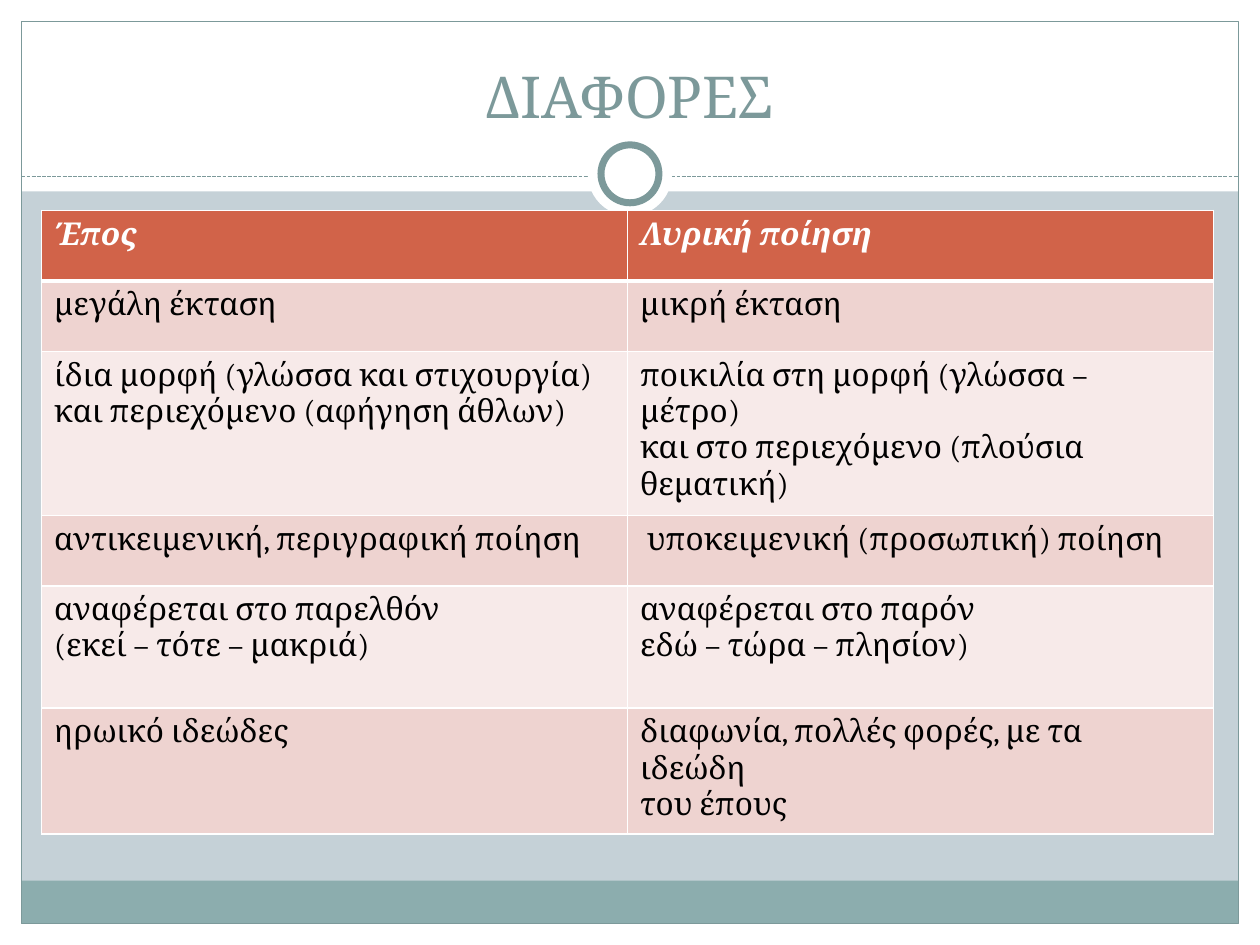
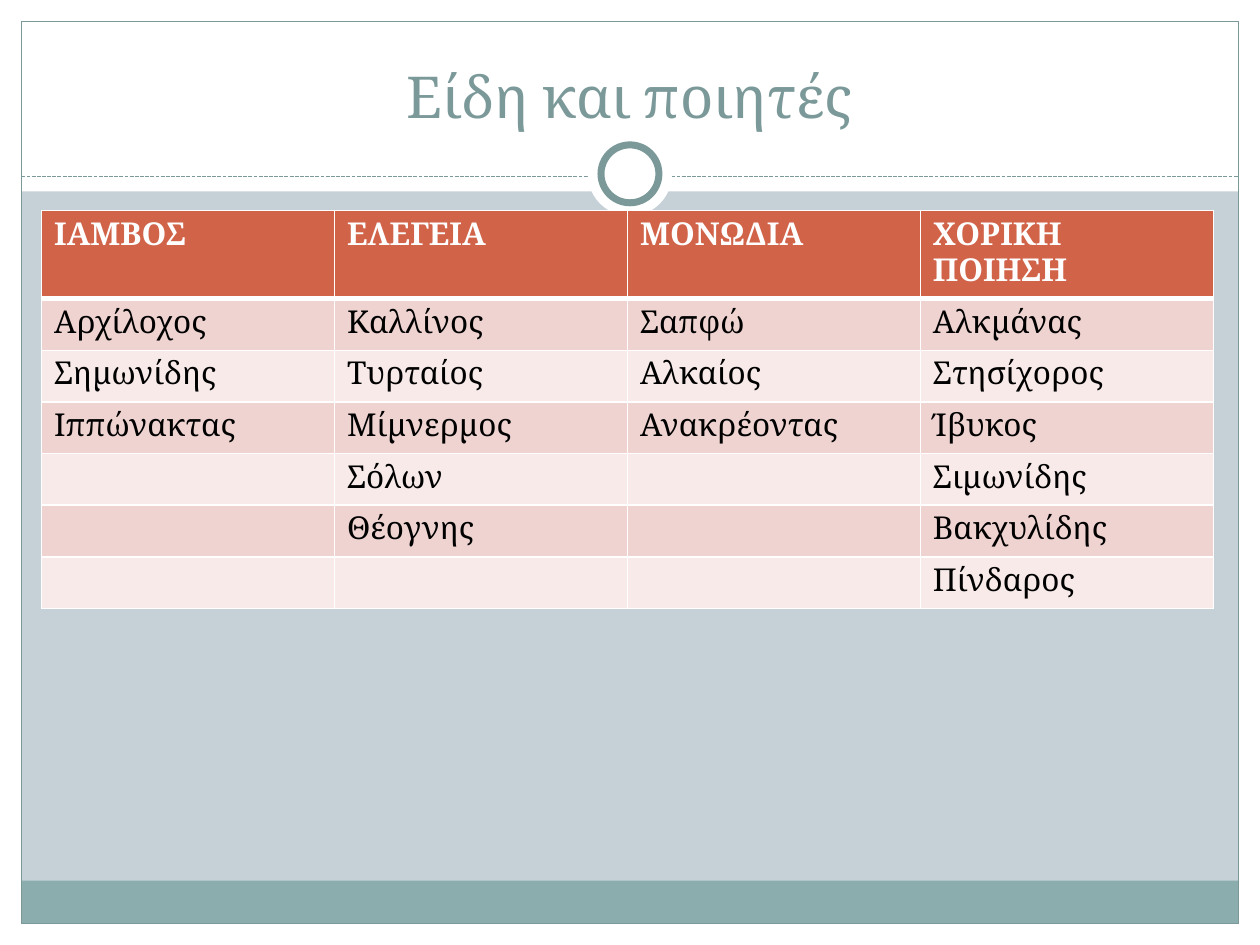
from collections import namedtuple

from lxml.etree import SubElement
from pptx import Presentation
from pptx.dml.color import RGBColor
from pptx.enum.dml import MSO_LINE
from pptx.enum.shapes import MSO_CONNECTOR, MSO_SHAPE
from pptx.enum.text import MSO_ANCHOR, PP_ALIGN
from pptx.oxml.ns import qn
from pptx.util import Inches, Pt

COLORS = {
    "background": "C5D1D7",
    "white": "FFFFFF",
    "black": "000000",
    "accent": "7C999A",
    "footer": "8CADAE",
    "header": "D16349",
    "odd_row": "EED3D0",
    "even_row": "F7EAE9",
}
FONT = "Cambria"
NBSP = chr(160)

Box = namedtuple("Box", "left top width height")
PAGE = Box(0, 0, 10, 7.5)
MARGIN = 0.17
FRAME = Box(MARGIN, MARGIN, PAGE.width - 2 * MARGIN, PAGE.height - 2 * MARGIN)
TITLE = Box(0.33, 0.25, 9.33, 0.83)
TABLE = Box(0.33, 1.67, 9.3, 4.63)

DIFFERENCES = [
    ["Έπος", "Λυρική ποίηση"],
    ["μεγάλη έκταση", "μικρή έκταση"],
    ["ίδια μορφή (γλώσσα και στιχουργία)\nκαι περιεχόμενο (αφήγηση άθλων)",
     "ποικιλία στη μορφή (γλώσσα – μέτρο)\nκαι στο περιεχόμενο (πλούσια θεματική)"],
    ["αντικειμενική, περιγραφική ποίηση", f"{NBSP}υποκειμενική (προσωπική) ποίηση"],
    ["αναφέρεται στο παρελθόν\n(εκεί – τότε – μακριά)",
     "αναφέρεται στο παρόν\nεδώ – τώρα – πλησίον)"],
    ["ηρωικό ιδεώδες", "διαφωνία, πολλές φορές, με τα ιδεώδη\nτου έπους"],
]
POETS = [
    ["ΙΑΜΒΟΣ", "ΕΛΕΓΕΙΑ", "ΜΟΝΩΔΙΑ", "ΧΟΡΙΚΗ ΠΟΙΗΣΗ"],
    ["Αρχίλοχος", "Καλλίνος", "Σαπφώ", "Αλκμάνας"],
    ["Σημωνίδης", "Τυρταίος", "Αλκαίος", "Στησίχορος"],
    ["Ιππώνακτας", "Μίμνερμος", "Ανακρέοντας", "Ίβυκος"],
    ["", "Σόλων", "", "Σιμωνίδης"],
    ["", "Θέογνης", "", "Βακχυλίδης"],
    ["", "", "", "Πίνδαρος"],
]


def color(name):
    return RGBColor.from_string(COLORS[name])


def inches(box):
    return [Inches(length) for length in box]


def set_font(paragraph, size, color_name, bold=False, italic=False):
    font = paragraph.font
    font.name, font.size = FONT, Pt(size)
    font.bold, font.italic = bold, italic
    font.color.rgb = color(color_name)


def add_panel(slide, kind, box, fill=None, line_width=None):
    shape = slide.shapes.add_shape(kind, *inches(box))
    shape.shadow.inherit = False
    if fill:
        shape.fill.solid()
        shape.fill.fore_color.rgb = color(fill)
    else:
        shape.fill.background()
    if line_width:
        shape.line.color.rgb = color("accent")
        shape.line.width = Pt(line_width)
    else:
        shape.line.fill.background()


def add_circle(slide, center_x, center_y, size, line_width=None):
    box = Box(center_x - size / 2, center_y - size / 2, size, size)
    add_panel(slide, MSO_SHAPE.OVAL, box, "white", line_width)


def add_backdrop(slide, page, frame):
    slide.background.fill.solid()
    slide.background.fill.fore_color.rgb = color("background")
    right = frame.left + frame.width
    bottom = frame.top + frame.height

    # White margins and title area, then the footer band
    for box in (
        Box(page.left, bottom, page.width, MARGIN),
        Box(page.left, page.top, page.width, 1.52),
        Box(page.left, page.top, MARGIN, page.height),
        Box(right, page.top, MARGIN, page.height),
    ):
        add_panel(slide, MSO_SHAPE.RECTANGLE, box, "white")
    footer = Box(frame.left, bottom - 0.34, frame.width, 0.34)
    add_panel(slide, MSO_SHAPE.RECTANGLE, footer, "footer")
    add_panel(slide, MSO_SHAPE.RECTANGLE, frame, line_width=0.75)

    # Dashed divider with a ring in the middle
    divider_y = Inches(page.top + 1.4)
    divider = slide.shapes.add_connector(
        MSO_CONNECTOR.STRAIGHT, Inches(frame.left), divider_y, Inches(right), divider_y)
    divider.line.color.rgb = color("accent")
    divider.line.width = Pt(0.75)
    divider.line.dash_style = MSO_LINE.SQUARE_DOT
    SubElement(divider._element.spPr, qn("a:effectLst"))
    center_x = page.left + page.width / 2
    add_circle(slide, center_x, page.top + 1.38, 0.67)
    add_circle(slide, center_x, page.top + 1.38, 0.46, line_width=4)


def add_title(slide, box, text):
    frame = slide.shapes.add_textbox(*inches(box)).text_frame
    frame.word_wrap = True
    frame.vertical_anchor = MSO_ANCHOR.BOTTOM
    paragraph = frame.paragraphs[0]
    paragraph.text = text
    paragraph.alignment = PP_ALIGN.CENTER
    set_font(paragraph, 33, "accent")


def add_borders(cell, top, bottom):
    properties = cell._tc.get_or_add_tcPr()
    for side, width in (("L", 1), ("R", 1), ("T", top), ("B", bottom)):
        line = SubElement(properties, qn(f"a:ln{side}"), w=str(Pt(width)))
        fill = SubElement(line, qn("a:solidFill"))
        SubElement(fill, qn("a:srgbClr"), val=COLORS["white"])


def add_banded_table(slide, box, rows, row_heights, italic_header):
    column_count = len(rows[0])
    table = slide.shapes.add_table(len(rows), column_count, *inches(box)).table
    for column in table.columns:
        column.width = Inches(box.width / column_count)
    for row_index, (texts, height) in enumerate(zip(rows, row_heights)):
        table.rows[row_index].height = Inches(height)
        header = row_index == 0
        band = "header" if header else "odd_row" if row_index % 2 else "even_row"
        for column_index, text in enumerate(texts):
            cell = table.cell(row_index, column_index)
            # Lines within a cell break after a non-breaking space
            cell.text = text.replace("\n", NBSP + "\v")
            set_font(cell.text_frame.paragraphs[0], 18,
                     "white" if header else "black", header, header and italic_header)
            add_borders(cell, top=3 if row_index == 1 else 1, bottom=3 if header else 1)
            cell.fill.solid()
            cell.fill.fore_color.rgb = color(band)


def add_table_slide(presentation, title, rows, row_heights, italic_header=False):
    slide = presentation.slides.add_slide(presentation.slide_layouts[6])
    add_backdrop(slide, PAGE, FRAME)
    add_title(slide, TITLE, title)
    box = TABLE._replace(height=sum(row_heights))
    add_banded_table(slide, box, rows, row_heights, italic_header)


def main():
    presentation = Presentation()
    presentation.slide_width = Inches(PAGE.width)
    presentation.slide_height = Inches(PAGE.height)
    add_table_slide(presentation, "ΔΙΑΦΟΡΕΣ", DIFFERENCES,
                    [0.56, 0.56, 0.97, 0.56, 0.97, 0.97], italic_header=True)
    add_table_slide(presentation, "Είδη και ποιητές", POETS, [0.41] * len(POETS))
    presentation.save("out.pptx")


if __name__ == "__main__":
    main()
